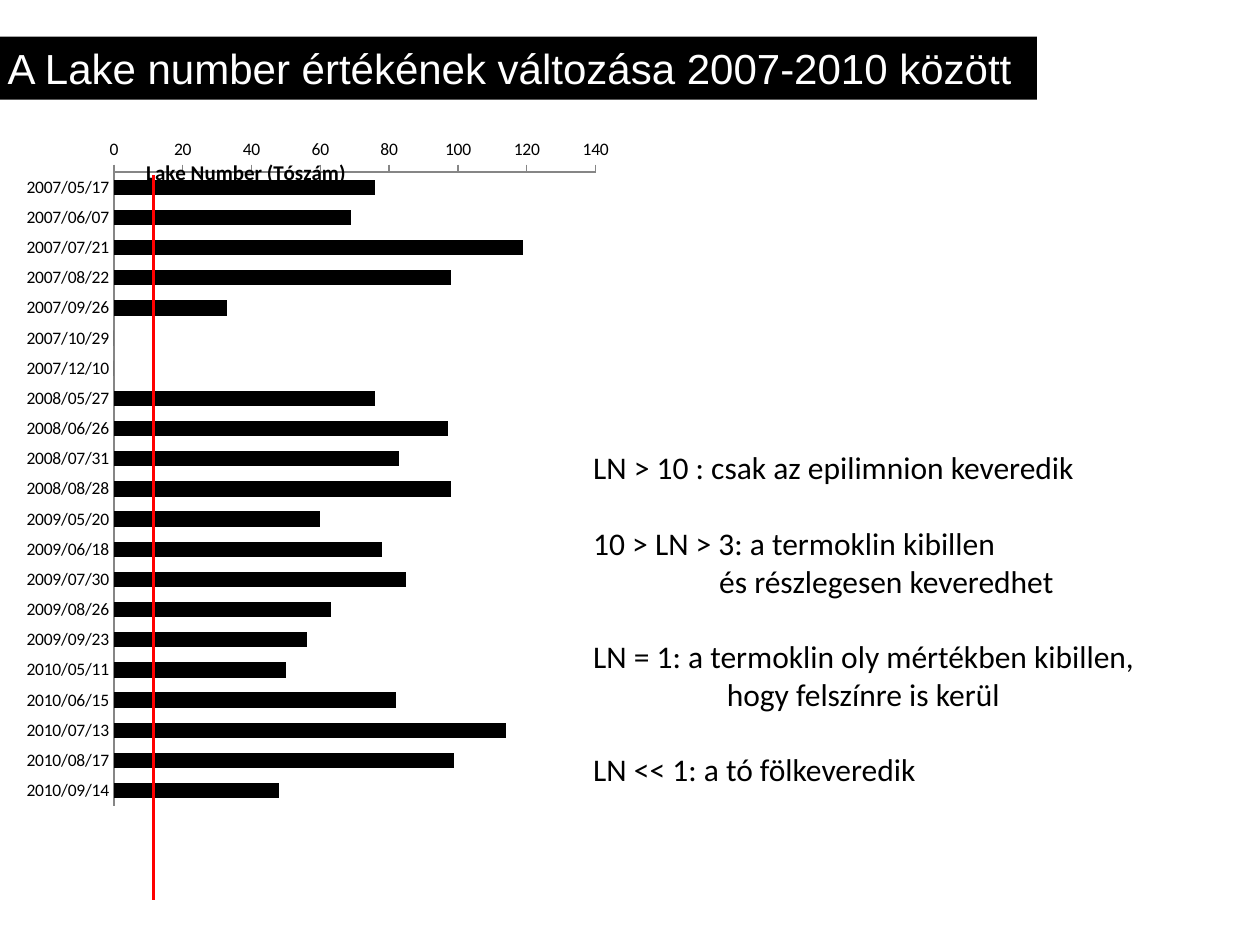
from lxml import etree
from pptx import Presentation
from pptx.chart.data import CategoryChartData
from pptx.dml.color import RGBColor
from pptx.enum.chart import XL_CHART_TYPE, XL_TICK_MARK
from pptx.enum.shapes import MSO_CONNECTOR
from pptx.enum.text import MSO_ANCHOR, PP_ALIGN
from pptx.oxml.ns import qn
from pptx.util import Inches, Pt

BAR = XL_CHART_TYPE.BAR_CLUSTERED
NO_TICK, TICK_OUT = XL_TICK_MARK.NONE, XL_TICK_MARK.OUTSIDE
STRAIGHT = MSO_CONNECTOR.STRAIGHT
MIDDLE, LEFT = MSO_ANCHOR.MIDDLE, PP_ALIGN.LEFT

COLORS = {"ink": "000000", "paper": "FFFFFF", "limit": "FF0000", "axis": "868686"}
TITLE = "A Lake number értékének változása 2007-2010 között"
AXIS_TITLE = "Lake Number (Tószám)"
LAKE_NUMBERS = [
    ("2007/05/17", 76), ("2007/06/07", 69), ("2007/07/21", 119),
    ("2007/08/22", 98), ("2007/09/26", 33), ("2007/10/29", 0),
    ("2007/12/10", 0), ("2008/05/27", 76), ("2008/06/26", 97),
    ("2008/07/31", 83), ("2008/08/28", 98), ("2009/05/20", 60),
    ("2009/06/18", 78), ("2009/07/30", 85), ("2009/08/26", 63),
    ("2009/09/23", 56), ("2010/05/11", 50), ("2010/06/15", 82),
    ("2010/07/13", 114), ("2010/08/17", 99), ("2010/09/14", 48),
]
# text, left indent in inches, space before in points
RULES = [
    ("LN > 10 : csak az epilimnion keveredik", 0, 0),
    ("10 > LN > 3: a termoklin kibillen", 0, 21.5),
    ("és részlegesen keveredhet", 1, 0),
    ("LN = 1: a termoklin oly mértékben kibillen,", 0, 21.5),
    ("hogy felszínre is kerül", 1.06, 0),
    ("LN << 1: a tó fölkeveredik", 0, 21.5),
]


def rgb(name):
    return RGBColor.from_string(COLORS[name])


def box(left, top, width, height):
    return [Inches(v) for v in (left, top, width, height)]


def style(font, size, color="ink", name="Calibri", bold=False):
    font.size, font.name, font.bold = Pt(size), name, bold
    font.color.rgb = rgb(color)


def set_layout(parent, index, **values):
    for old in parent.findall(qn("c:layout")):
        parent.remove(old)
    layout = etree.Element(qn("c:layout"))
    manual = etree.SubElement(layout, qn("c:manualLayout"))
    for tag, value in values.items():
        etree.SubElement(manual, qn(f"c:{tag}")).set("val", str(value))
    parent.insert(index, layout)


def add_title(slide):
    sp = slide.shapes.title
    sp.left, sp.top, sp.width, sp.height = box(-0.04, 0.29, 8.27, 0.5)
    sp.fill.solid()
    sp.fill.fore_color.rgb = rgb("ink")
    tf = sp.text_frame
    tf.text = TITLE
    tf.vertical_anchor = MIDDLE
    p = tf.paragraphs[0]
    p.alignment = LEFT
    style(p.runs[0].font, 24, "paper", "Arial")


def add_lake_chart(slide):
    data = CategoryChartData()
    data.categories = [date for date, _ in LAKE_NUMBERS]
    data.add_series(AXIS_TITLE, [value for _, value in LAKE_NUMBERS])
    chart = slide.shapes.add_chart(BAR, *box(0.12, 0.99, 4.81, 5.98), data).chart
    chart.has_title = chart.has_legend = False
    style(chart.font, 10)
    plot = chart.plots[0]
    plot.gap_width, plot.vary_by_categories = 96, False
    fill = plot.series[0].format.fill
    fill.solid()
    fill.fore_color.rgb = rgb("ink")

    dates, values = chart.category_axis, chart.value_axis
    dates.reverse_order = True
    values.minimum_scale, values.maximum_scale, values.major_unit = 0, 140, 20
    for axis, tick in ((dates, NO_TICK), (values, TICK_OUT)):
        axis.has_major_gridlines = False
        axis.major_tick_mark, axis.minor_tick_mark = tick, NO_TICK
        axis.format.line.color.rgb = rgb("axis")
        axis.format.line.width = Pt(0.75)
        style(axis.tick_labels.font, 10)
    tf = values.axis_title.text_frame
    tf.text = AXIS_TITLE
    style(tf.paragraphs[0].runs[0].font, 12, bold=True)
    set_layout(values.axis_title._element, 1, xMode="edge", yMode="edge", x=0.21, y=0.04)
    set_layout(chart._chartSpace.chart.plotArea, 0, layoutTarget="inner",
               xMode="edge", yMode="edge", x=0.163, y=0.063, w=0.795, h=0.841)


def add_rules(slide):
    tf = slide.shapes.add_textbox(*box(4.61, 3.51, 4.72, 2.83)).text_frame
    tf.word_wrap = True
    for i, (text, indent, gap) in enumerate(RULES):
        p = tf.add_paragraph() if i else tf.paragraphs[0]
        p.text = text
        if gap:
            p.space_before = Pt(gap)
        if indent:
            p._p.get_or_add_pPr().set("marL", str(Inches(indent)))
        style(p.runs[0].font, 18)


def add_limit_line(slide):
    x = Inches(1.22)
    line = slide.shapes.add_connector(STRAIGHT, x, Inches(1.39), x, Inches(7.14))
    line.line.color.rgb = rgb("limit")
    line.line.width = Pt(2)
    etree.SubElement(line._element.spPr, qn("a:effectLst"))


def main():
    """Build the Lake number slide."""
    prs = Presentation()
    prs.slide_width, prs.slide_height = Inches(10), Inches(7.5)
    slide = prs.slides.add_slide(prs.slide_layouts[5])
    add_lake_chart(slide)
    add_title(slide)
    add_rules(slide)
    add_limit_line(slide)
    prs.save("out.pptx")


if __name__ == "__main__":
    main()
